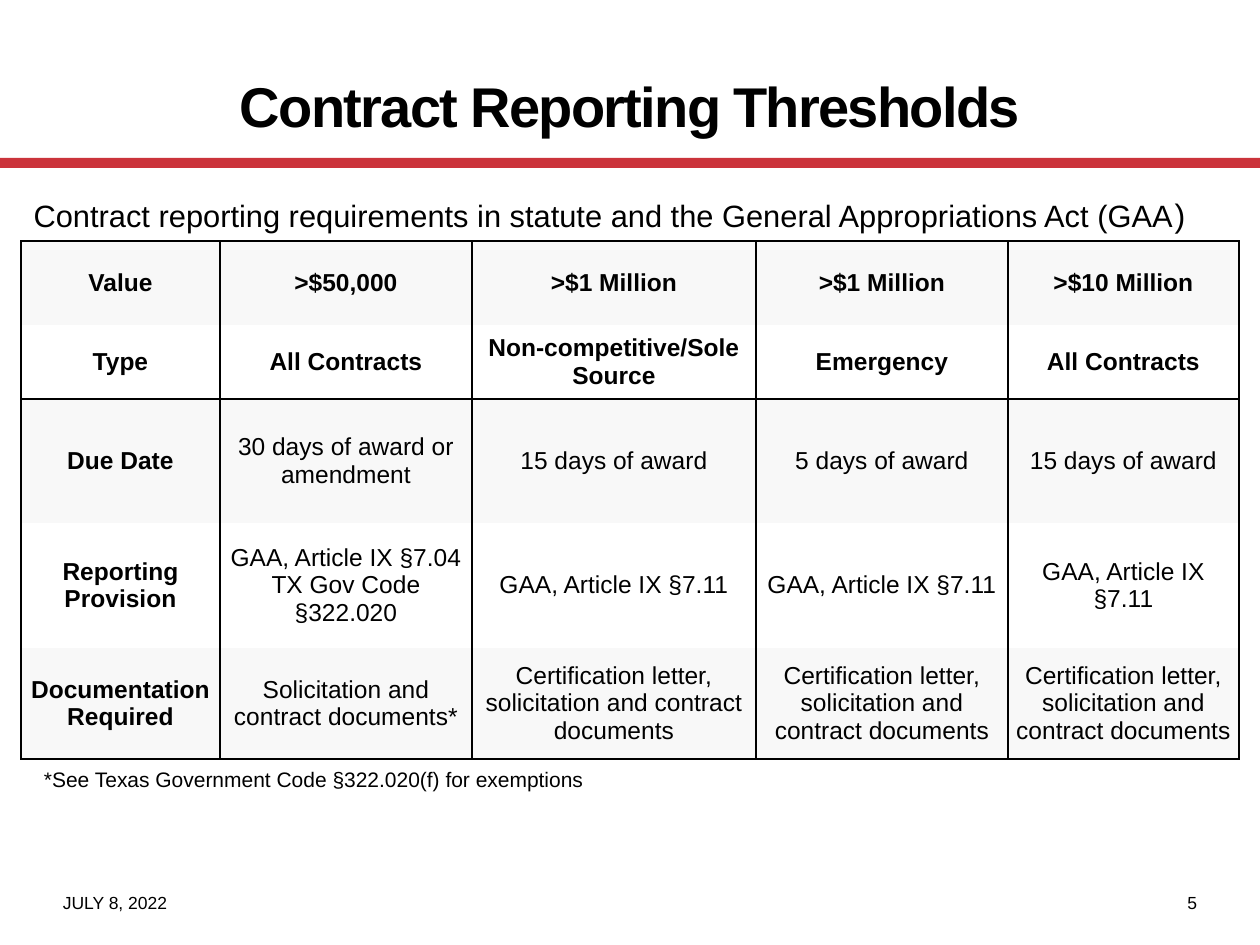
from lxml.etree import SubElement
from pptx import Presentation
from pptx.dml.color import RGBColor
from pptx.enum.shapes import MSO_SHAPE as Shape
from pptx.enum.text import MSO_ANCHOR as Anchor, MSO_AUTO_SIZE as AutoSize, PP_ALIGN as Align
from pptx.oxml.ns import qn
from pptx.util import Pt

SCALE = 914400 / 126
COLORS = {"ink": "000000", "accent": "CB333B", "band": "F8F8F8", "paper": "FFFFFF"}
COLUMNS = [199, 252, 284, 252, 231]
ROWS = [84, 74, 124, 125, 111]
LETTER = "Certification letter,\nsolicitation and contract documents"
ARTICLE = "GAA, Article IX §7.11"
CELLS = [
    ["Value", ">$50,000", ">$1 Million", ">$1 Million", ">$10 Million"],
    ["Type", "All Contracts", "Non-competitive/Sole Source", "Emergency", "All Contracts"],
    ["Due Date", "30 days of award or amendment", "15 days of award",
     "5 days of award", "15 days of award"],
    ["Reporting Provision", "GAA, Article IX §7.04\nTX Gov Code §322.020",
     ARTICLE, ARTICLE, ARTICLE],
    ["Documentation Required", "Solicitation and contract documents*", LETTER, LETTER, LETTER],
]


def px(length):
    return round(length * SCALE)


def color(name):
    return RGBColor.from_string(COLORS[name])


def place(shape, box):
    shape.left, shape.top, shape.width, shape.height = map(px, box)


def add_run(para, text, size, bold=False):
    span = para.add_run()
    span.text = text
    span.font.name = "Arial"
    span.font.size = Pt(size)
    span.font.bold = bold
    span.font.color.rgb = color("ink")
    return span


def write(frame, text, size, bold=False, align=Align.LEFT):
    for index, line in enumerate(text.split("\n")):
        para = frame.add_paragraph() if index else frame.paragraphs[0]
        para.alignment = align
        add_run(para, line, size, bold)


def add_label(page, box, text, size, inset=0, align=Align.LEFT):
    label = page.shapes.add_textbox(*map(px, box))
    frame = label.text_frame
    frame.word_wrap = True
    frame.margin_left = frame.margin_right = px(inset)
    frame.margin_top = frame.margin_bottom = px(inset / 2)
    write(frame, text, size, align=align)


def add_heading(page, box):
    left, top, width, height = box
    bar = page.shapes.add_shape(Shape.RECTANGLE, 0, px(top + 126), px(1260), px(10))
    bar.shadow.inherit = False
    bar.fill.solid()
    bar.fill.fore_color.rgb = color("accent")
    bar.line.fill.background()
    title = page.shapes.title
    place(title, box)
    frame = title.text_frame
    frame.auto_size = AutoSize.NONE
    frame.vertical_anchor = Anchor.MIDDLE
    write(frame, "Contract Reporting Thresholds", 32, bold=True, align=Align.CENTER)
    frame.paragraphs[0].runs[0].font._element.set("spc", "-100")


def add_intro(page, box):
    body = page.placeholders[1]
    place(body, box)
    frame = body.text_frame
    frame.auto_size = AutoSize.NONE
    para = frame.paragraphs[0]
    para.space_before = Pt(12)
    properties = para._p.get_or_add_pPr()
    properties.set("marL", "0")
    properties.set("indent", "0")
    SubElement(properties, qn("a:buNone"))
    add_run(para, "Contract reporting requirements in statute and "
                  "the General Appropriations Act (GAA", 17.6)
    add_run(para, ")", 18.5)


def set_borders(cell, drawn):
    properties = cell._tc.get_or_add_tcPr()
    for side in "LRTB":
        line = SubElement(properties, qn(f"a:ln{side}"), w=str(Pt(1)))
        if side in drawn:
            fill = SubElement(line, qn("a:solidFill"))
            SubElement(fill, qn("a:srgbClr"), val=COLORS["ink"])
        else:
            SubElement(line, qn("a:noFill"))


def add_thresholds(page, left, top):
    size = px(sum(COLUMNS)), px(sum(ROWS))
    table = page.shapes.add_table(len(ROWS), len(COLUMNS), px(left), px(top), *size).table
    table.first_row = table.horz_banding = False
    for column, width in zip(table.columns, COLUMNS):
        column.width = px(width)
    edges = {0: "LRT", 1: "LRB", 2: "LRT", 4: "LRB"}
    for r, texts in enumerate(CELLS):
        table.rows[r].height = px(ROWS[r])
        for c, text in enumerate(texts):
            cell = table.cell(r, c)
            set_borders(cell, edges.get(r, "LR"))
            cell.fill.solid()
            cell.fill.fore_color.rgb = color("paper" if r % 2 else "band")
            cell.vertical_anchor = Anchor.MIDDLE
            cell.margin_left = cell.margin_right = px(6 if r else 12)
            cell.margin_top = cell.margin_bottom = px(6)
            write(cell.text_frame, text, 14, bold=r < 2 or c == 0, align=Align.CENTER)


def add_footer(page, box):
    left, top, width, height = box
    half = width // 2
    add_label(page, (left, top, half, height), "JULY 8, 2022", 10)
    add_label(page, (left + half, top, half, height), "5", 10, align=Align.RIGHT)


def main():
    deck = Presentation()
    deck.slide_width, deck.slide_height = px(1260), px(945)
    page = deck.slides.add_slide(deck.slide_layouts[1])
    page.background.fill.solid()
    page.background.fill.fore_color.rgb = color("paper")
    add_heading(page, (63, 32, 1134, 147))
    add_intro(page, (21, 189, 1218, 73))
    add_thresholds(page, 21, 241)
    add_label(page, (32, 761, 570, 38), "*See Texas Government Code §322.020(f) for exemptions",
              12, inset=12)
    add_footer(page, (63, 892, 1134, 50))
    deck.save("out.pptx")


if __name__ == "__main__":
    main()
